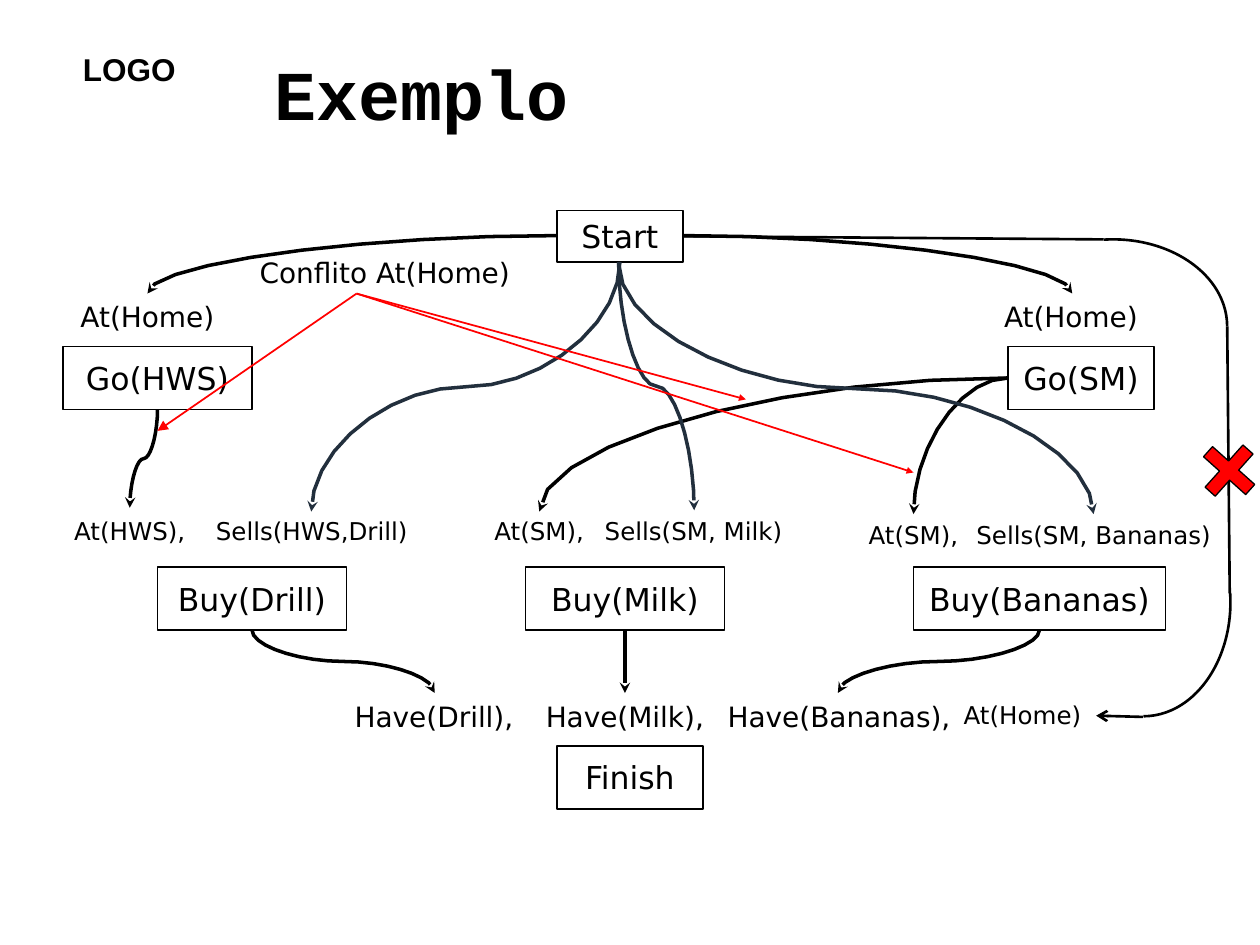
from dataclasses import dataclass

from lxml import etree
from pptx import Presentation
from pptx.dml.color import RGBColor
from pptx.enum.shapes import MSO_CONNECTOR, MSO_SHAPE
from pptx.enum.text import MSO_ANCHOR, MSO_AUTO_SIZE, PP_ALIGN
from pptx.oxml.ns import qn
from pptx.util import Inches, Pt

BLACK, SLATE, RED = "000000", "222F3D", "FF0000"
SANS = "DejaVu Sans"
STEPS = 9  # segments in each curved piece

Point = tuple[float, float]


@dataclass
class Action:
    text: str
    x: float
    y: float
    w: float
    h: float = 0.5


@dataclass
class Condition:
    text: str
    x: float
    y: float
    w: float
    size: int = 14


@dataclass
class Curve:
    start: Point
    end: Point
    color: str = BLACK


@dataclass
class Threat:
    target: Point
    head_size: str = "sm"


ACTIONS = [
    Action("Start", 4.42, 1.67, 1, 0.41),
    Action("Go(HWS)", 0.5, 2.75, 1.5),
    Action("Go(SM)", 8, 2.75, 1.16),
    Action("Buy(Drill)", 1.25, 4.5, 1.5),
    Action("Buy(Milk)", 4.17, 4.5, 1.58),
    Action("Buy(Bananas)", 7.25, 4.5, 2),
    Action("Finish", 4.42, 5.92, 1.16),
]
CONDITIONS = [
    Condition("Conflito At(Home)", 1.22, 1.98, 3.67, 16),
    Condition("At(Home)", 0.52, 2.33, 1.3, 16),
    Condition("At(Home)", 7.85, 2.33, 1.3, 16),
    Condition("At(HWS),", 0.46, 4.05, 1.14),
    Condition("Sells(HWS,Drill)", 1.58, 4.05, 1.79),
    Condition("At(SM),", 3.8, 4.05, 0.96),
    Condition("Sells(SM, Milk)", 4.67, 4.05, 1.67),
    Condition("At(SM),", 6.77, 4.08, 0.96),
    Condition("Sells(SM, Bananas)", 7.62, 4.08, 2.12),
    Condition("Have(Drill),", 2.69, 5.5, 1.51, 16),
    Condition("Have(Milk),", 4.21, 5.5, 1.5, 16),
    Condition("Have(Bananas),", 5.65, 5.5, 2.02, 16),
    Condition("At(Home)", 7.53, 5.51, 1.17),
]
BENDS = [
    Curve((4.42, 1.87), (1.17, 2.33)),
    Curve((5.42, 1.87), (8.51, 2.33)),
    Curve((8, 3), (7.25, 4.08)),
    Curve((8, 3), (4.28, 4.06)),
]
WAVES = [
    Curve((1.25, 3.25), (1.03, 4.03)),
    Curve((4.92, 2.08), (2.47, 4.06), SLATE),
    Curve((4.91, 2.08), (5.51, 4.05), SLATE),
    Curve((4.91, 2.09), (8.68, 4.08), SLATE),
    Curve((2, 5), (3.45, 5.5)),
    Curve((8.25, 5), (6.65, 5.5)),
]
CONFLICT = (2.83, 2.33)
THREATS = [Threat((1.25, 3.42), "med"), Threat((5.92, 3.17)), Threat((7.25, 3.75))]


def rgb(color: str) -> RGBColor:
    return RGBColor.from_string(color)


def add_text(tf, text: str, size: int, font: str = SANS, bold: bool = False,
             align=PP_ALIGN.CENTER) -> None:
    p = tf.paragraphs[0]
    p.alignment = align
    r = p.add_run()
    r.text = text
    r.font.name, r.font.size, r.font.bold = font, Pt(size), bold
    r.font.color.rgb = rgb(BLACK)


def set_line(s, color: str, width: float, head: str = "", head_size: str = "med") -> None:
    s.line.color.rgb = rgb(color)
    s.line.width = Pt(width)
    if head:
        etree.SubElement(s.line._get_or_add_ln(), qn("a:tailEnd"),
                         type=head, w=head_size, len=head_size)


def add_outline(slide, kind, x: float, y: float, w: float, h: float, width: float):
    """Add an unfilled preset shape with a black line."""
    s = slide.shapes.add_shape(kind, Inches(x), Inches(y), Inches(w), Inches(h))
    s.shadow.inherit = False
    s.fill.background()
    set_line(s, BLACK, width)
    return s


def add_action(slide, a: Action):
    s = add_outline(slide, MSO_SHAPE.RECTANGLE, a.x, a.y, a.w, a.h, 1)
    s.text_frame.word_wrap = False
    s.text_frame.vertical_anchor = MSO_ANCHOR.MIDDLE
    add_text(s.text_frame, a.text, 18)
    return s


def add_condition(slide, c: Condition):
    height = 0.37 if c.size == 16 else 0.34
    s = slide.shapes.add_textbox(Inches(c.x), Inches(c.y), Inches(c.w), Inches(height))
    s.text_frame.word_wrap = False
    s.text_frame.auto_size = MSO_AUTO_SIZE.SHAPE_TO_FIT_TEXT
    add_text(s.text_frame, c.text, c.size)
    return s


def add_line(slide, start: Point, end: Point, color: str, width: float,
             head: str = "", head_size: str = "med"):
    s = slide.shapes.add_connector(
        MSO_CONNECTOR.STRAIGHT, *(Inches(v) for v in (*start, *end)))
    set_line(s, color, width, head, head_size)
    etree.SubElement(s._element.spPr, qn("a:effectLst"))
    return s


def bezier(a: Point, b: Point, c: Point, d: Point) -> list[Point]:
    """Sample a cubic curve, leaving out its first point."""
    def at(t: float) -> Point:
        u = 1 - t
        return tuple(u**3 * i + 3 * u * u * t * j + 3 * u * t * t * k + t**3 * m
                     for i, j, k, m in zip(a, b, c, d))
    return [at(n / STEPS) for n in range(1, STEPS + 1)]


def bend(c: Curve) -> list[Point]:
    """Leave sideways and arrive downwards."""
    (x0, y0), (x1, y1) = c.start, c.end
    return bezier(c.start, ((x0 + x1) / 2, y0), (x1, (y0 + y1) / 2), c.end)


def wave(c: Curve) -> list[Point]:
    """Leave downwards, cross the middle sideways and arrive downwards."""
    (x0, y0), (x1, y1) = c.start, c.end
    w, h = x1 - x0, y1 - y0
    mid = (x0 + w / 2, y0 + h / 2)
    return (bezier(c.start, (x0, y0 + h / 4), (x0 + w / 4, mid[1]), mid)
            + bezier(mid, (x1 - w / 4, mid[1]), (x1, y1 - h / 4), c.end))


def add_curve(slide, c: Curve, points: list[Point]) -> None:
    start, *rest = [(Inches(x), Inches(y)) for x, y in (c.start, *points)]
    builder = slide.shapes.build_freeform(*start)
    builder.add_line_segments(rest, close=False)
    s = builder.convert_to_shape()
    s.shadow.inherit = False
    s.fill.background()
    set_line(s, c.color, 2, "stealth")


def add_arc(slide, x: float, y: float, rotation: float = 0) -> None:
    s = add_outline(slide, MSO_SHAPE.ARC, x, y, 1.81, 1.38, 1.5)
    s.adjustments[0], s.adjustments[1] = 158.303, 0
    s.rotation = rotation


def main() -> None:
    prs = Presentation()
    prs.slide_width, prs.slide_height = Inches(10), Inches(7.5)
    slide = prs.slides.add_slide(prs.slide_layouts[5])

    title = slide.shapes.title
    title.left, title.top = Inches(2.08), Inches(0.25)
    title.width, title.height = Inches(7.42), Inches(0.97)
    title.text_frame.vertical_anchor = MSO_ANCHOR.MIDDLE
    add_text(title.text_frame, "Exemplo", 40, "Courier New", True, PP_ALIGN.LEFT)
    logo = slide.shapes.add_textbox(Inches(0.56), Inches(0.35), Inches(0.94), Inches(0.4))
    logo.text_frame.word_wrap = False
    add_text(logo.text_frame, "LOGO", 18, "Arial", True, PP_ALIGN.LEFT)

    actions = {a.text: add_action(slide, a) for a in ACTIONS}
    conditions = {c.text: add_condition(slide, c) for c in CONDITIONS}
    for c in BENDS:
        add_curve(slide, c, bend(c))
    for c in WAVES:
        add_curve(slide, c, wave(c))
    milk = add_line(slide, (4.96, 5), (4.96, 5.5), BLACK, 2, "stealth")
    milk.begin_connect(actions["Buy(Milk)"], 2)
    milk.end_connect(conditions["Have(Milk),"], 0)
    for t in THREATS:
        add_line(slide, CONFLICT, t.target, RED, 1, "triangle", t.head_size)

    add_arc(slide, 7.93, 1.9)
    add_arc(slide, 8.17, 4.09, 90)
    home = add_line(slide, (5.42, 1.87), (8.76, 1.9), BLACK, 1.5)
    home.begin_connect(actions["Start"], 3)
    add_line(slide, (9.76, 4.71), (9.74, 2.59), BLACK, 1.5)
    add_line(slide, (9.07, 5.69), (8.7, 5.68), BLACK, 1.5, "arrow")
    cross = add_outline(slide, MSO_SHAPE.CROSS, 9.53, 3.51, 0.45, 0.45, 0.75)
    cross.fill.solid()
    cross.fill.fore_color.rgb = rgb(RED)
    cross.adjustments[0] = 0.38
    cross.rotation = 41.9
    prs.save("out.pptx")


if __name__ == "__main__":
    main()
